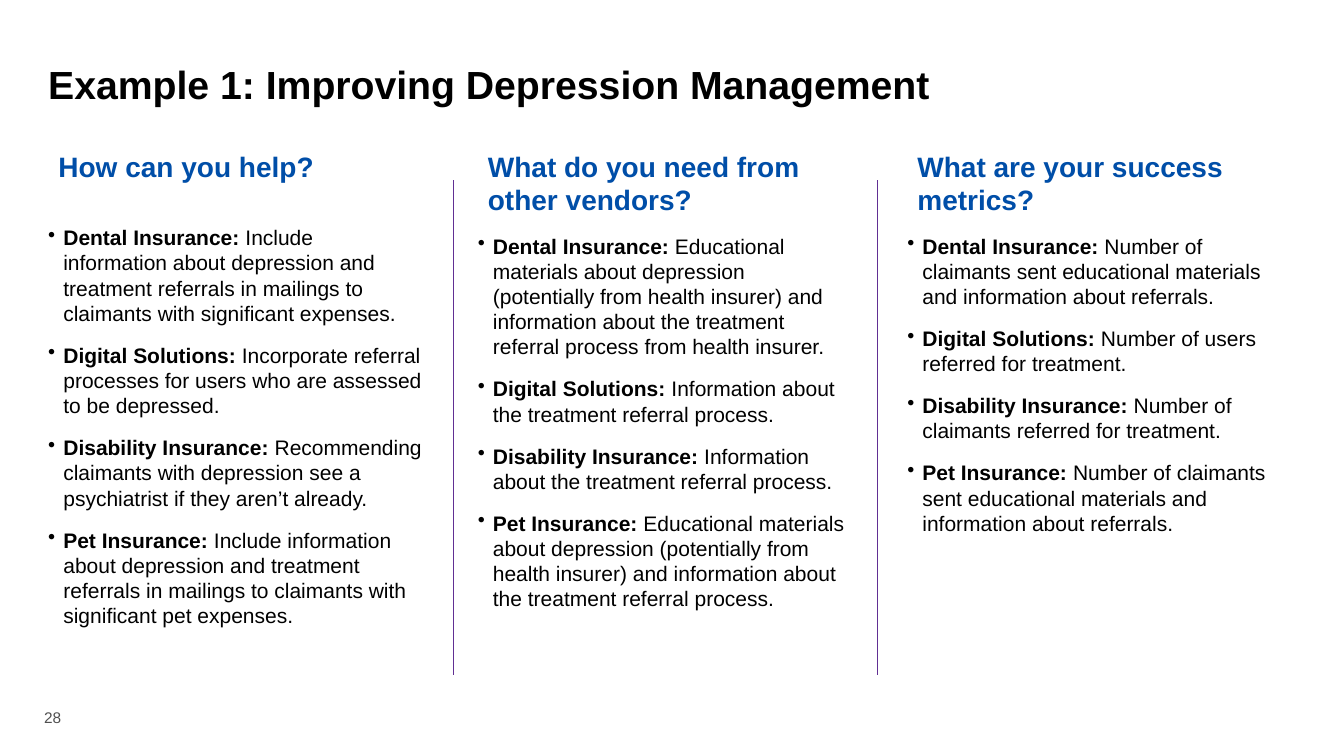
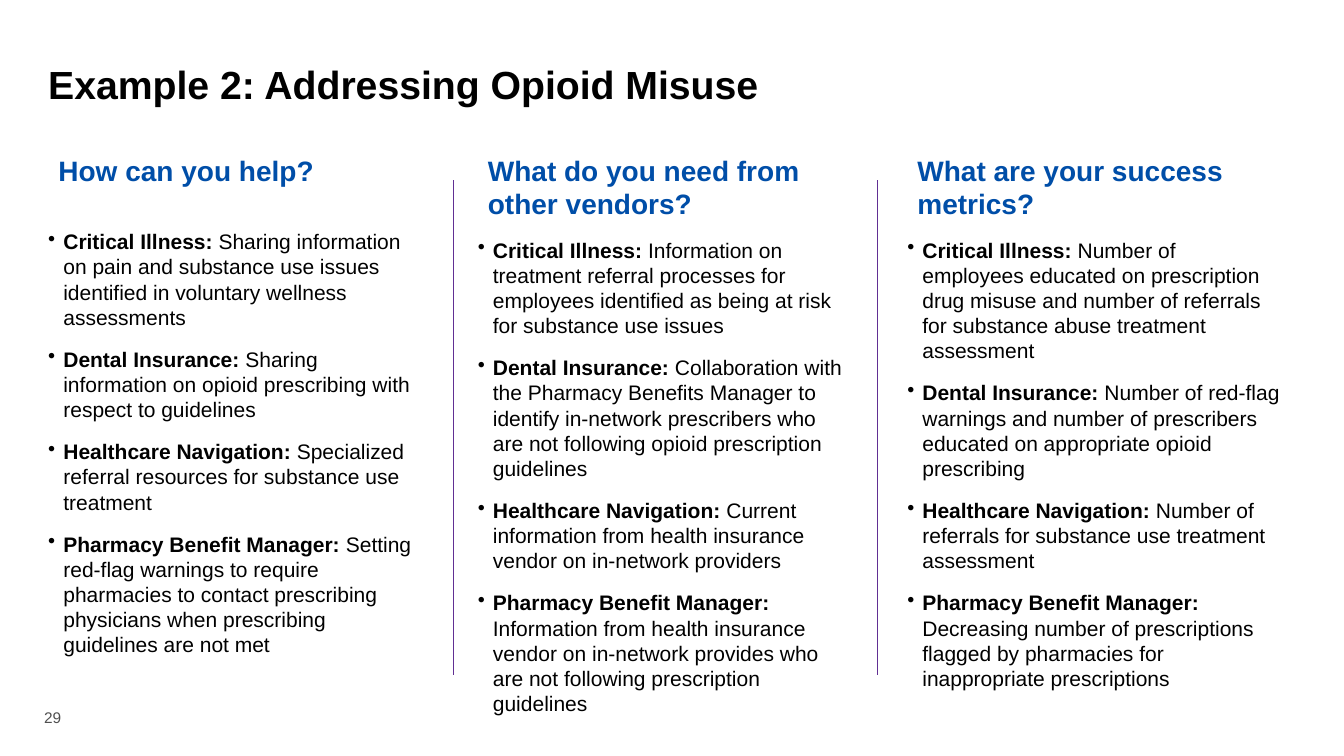
import pptx
import pptx.util
import pptx.dml.color
import pptx.enum.shapes
import pptx.enum.text
import lxml.etree

INK, BLUE, GREY, PURPLE = "000000", "004EA8", "505050", "612F93"
FONT = "Arial"
LEFT, COLUMN_WIDTH, COLUMN_STEP = 0.38, 3.91, 4.26
BODY_BOTTOM = 6.34
RULES_X, RULE_TOP, RULE_BOTTOM = (4.5, 8.7), 1.79, 6.7
HEADINGS = [
    ("How can you help?", 30),
    ("What do you need from other vendors?", 12),
    ("What are your success metrics?", 12),
]

SLIDES = [
    {
        "title": "Example 1: Improving Depression Management",
        "number": 28,
        "top": 1.43,
        "vendors": ["Dental Insurance", "Digital Solutions", "Disability Insurance", "Pet Insurance"],
        "columns": [
            [
                "Include information about depression and treatment referrals in mailings to claimants with significant expenses.",
                "Incorporate referral processes for users who are assessed to be depressed.",
                "Recommending claimants with depression see a psychiatrist if they aren’t already.",
                "Include information about depression and treatment referrals in mailings to claimants with significant pet expenses.",
            ],
            [
                "Educational materials about depression (potentially from health insurer) and information about the treatment referral process from health insurer.",
                "Information about the treatment referral process.",
                "Information about the treatment referral process.",
                "Educational materials about depression (potentially from health insurer) and information about the treatment referral process.",
            ],
            [
                "Number of claimants sent educational materials and information about referrals.",
                "Number of users referred for treatment.",
                "Number of claimants referred for treatment.",
                "Number of claimants sent educational materials and information about referrals.",
            ],
        ],
    },
    {
        "title": "Example 2: Addressing Opioid Misuse",
        "number": 29,
        "top": 1.47,
        "vendors": ["Critical Illness", "Dental Insurance", "Healthcare Navigation", "Pharmacy Benefit Manager"],
        "columns": [
            [
                "Sharing information on pain and substance use issues identified in voluntary wellness assessments",
                "Sharing information on opioid prescribing with respect to guidelines",
                "Specialized referral resources for substance use treatment",
                "Setting red-flag warnings to require pharmacies to contact prescribing physicians when prescribing guidelines are not met",
            ],
            [
                "Information on treatment referral processes for employees identified as being at risk for substance use issues",
                "Collaboration with the Pharmacy Benefits Manager to identify in-network prescribers who are not following opioid prescription guidelines",
                "Current information from health insurance vendor on in-network providers",
                "Information from health insurance vendor on in-network provides who are not following prescription guidelines",
            ],
            [
                "Number of employees educated on prescription drug misuse and number of referrals for substance abuse treatment assessment",
                "Number of red-flag warnings and number of prescribers educated on appropriate opioid prescribing",
                "Number of referrals for substance use treatment assessment",
                "Decreasing number of prescriptions flagged by pharmacies for inappropriate prescriptions",
            ],
        ],
    },
]


def color(value):
    return pptx.dml.color.RGBColor.from_string(value)


def add_text_frame(s, left, top, width, height, anchor="TOP"):
    box = s.shapes.add_textbox(*map(pptx.util.Inches, (left, top, width, height)))
    tf = box.text_frame
    tf.word_wrap = True
    tf.vertical_anchor = getattr(pptx.enum.text.MSO_ANCHOR, anchor)
    return tf


def style_run(r, size, value, bold=False):
    r.font.name = FONT
    r.font.size = pptx.util.Pt(size)
    r.font.bold = bold
    r.font.color.rgb = color(value)


def set_spacing(p, left, indent, after):
    pPr = p._p.get_or_add_pPr()
    pPr.set("marL", str(pptx.util.Inches(left)))
    pPr.set("indent", str(pptx.util.Inches(indent)))
    p.space_after = pptx.util.Pt(after)
    return pPr


def add_bullet(tf, vendor, detail):
    p = tf.add_paragraph()
    pPr = set_spacing(p, 0.15, -0.15, 12)
    lxml.etree.SubElement(pPr, pptx.oxml.ns.qn("a:buChar"), char="•")
    for text, bold in ((vendor + ": ", True), (detail, False)):
        r = p.add_run()
        r.text = text
        style_run(r, 15, INK, bold)


def add_column(s, index, top, vendors, details):
    heading, after = HEADINGS[index]
    tf = add_text_frame(s, LEFT + index * COLUMN_STEP, top, COLUMN_WIDTH, BODY_BOTTOM - top)
    tf.text = heading
    p = tf.paragraphs[0]
    set_spacing(p, 0.1, 0, after)
    style_run(p.runs[0], 20, BLUE, True)
    for vendor, detail in zip(vendors, details):
        add_bullet(tf, vendor, detail)


def add_rule(s, x):
    line = s.shapes.add_connector(
        pptx.enum.shapes.MSO_CONNECTOR.STRAIGHT,
        *map(pptx.util.Inches, (x, RULE_TOP, x, RULE_BOTTOM)))
    line.line.color.rgb = color(PURPLE)
    line.line.width = pptx.util.Pt(0.5)
    lxml.etree.SubElement(line._element.spPr, pptx.oxml.ns.qn("a:effectLst"))


def add_slide(prs, content):
    s = prs.slides.add_slide(prs.slide_layouts[6])
    tf = add_text_frame(s, LEFT, 0.5, 11.49, 0.6, "BOTTOM")
    tf.margin_bottom = pptx.util.Inches(0.03)
    tf.text = content["title"]
    tf.paragraphs[0].line_spacing = 1.1
    style_run(tf.paragraphs[0].runs[0], 28, INK, True)
    for index, details in enumerate(content["columns"]):
        add_column(s, index, content["top"], content["vendors"], details)
    tf = add_text_frame(s, 0.34, 6.98, 0.5, 0.28, "BOTTOM")
    tf.text = str(content["number"])
    style_run(tf.paragraphs[0].runs[0], 11, GREY)
    for x in RULES_X:
        add_rule(s, x)


def main():
    prs = pptx.Presentation()
    prs.slide_width = pptx.util.Inches(13.33)
    prs.slide_height = pptx.util.Inches(7.5)
    for content in SLIDES:
        add_slide(prs, content)
    prs.save("out.pptx")


if __name__ == "__main__":
    main()
